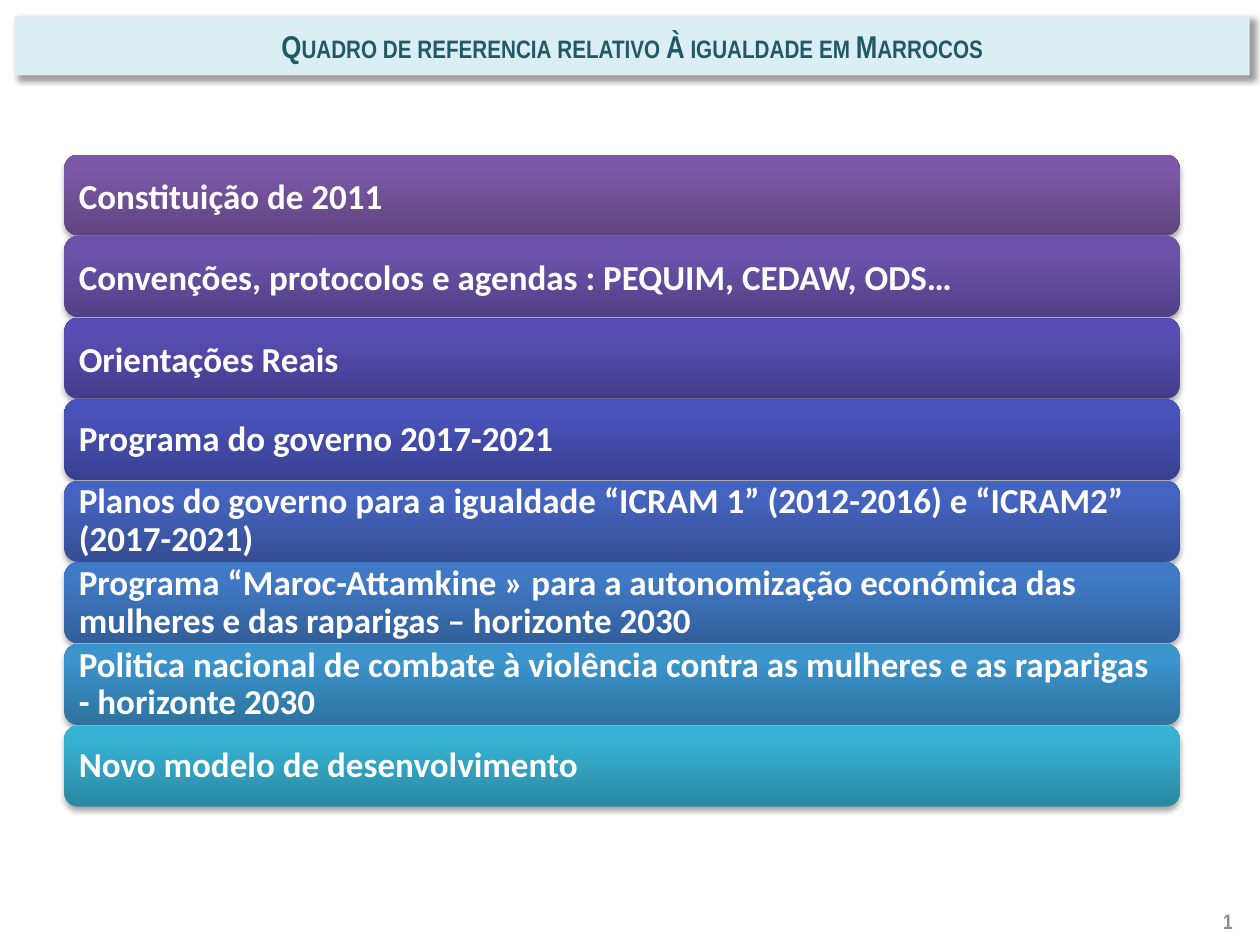
"""Build the slide on Morocco's reference framework for equality."""
import copy

import pptx
import pptx.dml.color
import pptx.enum.shapes
import pptx.enum.text
import pptx.oxml
import pptx.oxml.ns
import pptx.util
from lxml import etree

Cm = pptx.util.Cm
RGB = pptx.dml.color.RGBColor
qn = pptx.oxml.ns.qn
MID = pptx.enum.text.MSO_ANCHOR.MIDDLE
ALIGN = pptx.enum.text.PP_ALIGN

PALE = RGB(0xDB, 0xEE, 0xF4)
TEAL = RGB(0x21, 0x59, 0x68)
GREY = RGB(0x8C, 0x8C, 0x8C)
WHITE = RGB(0xFF, 0xFF, 0xFF)

BARS = [
    ("Constituição de 2011", 1.0, "5F4480 7B58A6 7C57A8"),
    ("Convenções, protocolos e agendas : PEQUIM, CEDAW, ODS…", 1.0,
     "534085 6B53AC 6B52AF"),
    ("Orientações Reais", 1.0, "443C8A 584EB3 574CB6"),
    ("Programa do governo 2017-2021", 0.9, "383F8F 4952B9 4751BC"),
    ("Planos do governo para a igualdade “ICRAM 1” (2012-2016) e "
     "“ICRAM2” (2017-2021)", 0.9, "354D93 4564BF 4263C3"),
    ("Programa “Maroc-Attamkine » para a autonomização económica das "
     "mulheres e das raparigas – horizonte 2030", 0.9, "315E98 407AC6 3E7AC9"),
    ("Politica nacional de combate à violência contra as mulheres e as "
     "raparigas - horizonte 2030", 0.9, "2E729D 3B94CC 3995CF"),
    ("Novo modelo de desenvolvimento", 0.9, "2A88A2 37B1D2 34B4D6"),
]


def shade(shape, blur, dist, angle, alpha):
    """Give the shape a soft black outer shadow."""
    shape.shadow.inherit = False
    effects = shape._element.spPr.find(qn("a:effectLst"))
    outer = etree.SubElement(
        effects, qn("a:outerShdw"), blurRad=str(pptx.util.Pt(blur)),
        dist=str(pptx.util.Pt(dist)), dir=str(angle * 60000),
        algn="ctr", rotWithShape="0")
    black = etree.SubElement(outer, qn("a:srgbClr"), val="000000")
    etree.SubElement(black, qn("a:alpha"), val=str(alpha * 1000))


def write(shape, text, face, size, color, align):
    """Add one bold run, centred vertically, and return it with its paragraph."""
    frame = shape.text_frame
    frame.word_wrap = True
    frame.auto_size = pptx.enum.text.MSO_AUTO_SIZE.NONE
    frame.vertical_anchor = MID
    para = frame.paragraphs[0]
    para.alignment = align
    run = para.add_run()
    run.text = text
    run.font.name = face
    run.font.size = pptx.util.Pt(size)
    run.font.bold = True
    run.font.color.rgb = color
    return para, run


deck = pptx.Presentation()
deck.slide_width, deck.slide_height = Cm(25.4), Cm(19.05)
slide = deck.slides.add_slide(deck.slide_layouts[5])

title = slide.shapes.title
title.left, title.top = Cm(0.3), Cm(0.33)
title.width, title.height = Cm(24.89), Cm(1.19)
geom = etree.SubElement(title._element.spPr, qn("a:prstGeom"), prst="snip2DiagRect")
etree.SubElement(geom, qn("a:avLst"))
title.fill.solid()
title.fill.fore_color.rgb = PALE
shade(title, 4, 3, 45, 40)
para, run = write(title, "Quadro de referencia relativo À igualdade em Marrocos",
                  "Arial Narrow", 18, TEAL, ALIGN.CENTER)
run.font._element.set("cap", "small")

page = slide.shapes.add_textbox(Cm(19.18), Cm(18.06), Cm(5.92), Cm(1.02))
para, run = write(page, "2", "Arial Narrow", 12, GREY, ALIGN.RIGHT)
field = etree.Element(qn("a:fld"), type="slidenum",
                      id="{B6F15528-21DE-4FAA-801E-634DDDAF4B2B}")
field.extend(list(run._r))
para._p.replace(run._r, field)

first, last = 3.12, 14.63
step = (last - first) / (len(BARS) - 1)
for row, (text, space, tones) in enumerate(BARS):
    bar = slide.shapes.add_shape(
        pptx.enum.shapes.MSO_SHAPE.ROUNDED_RECTANGLE,
        Cm(1.3), Cm(first + row * step), Cm(22.48), Cm(1.63))
    bar.line.fill.background()
    bar.fill.gradient()
    bar.fill.gradient_angle = 90
    stops = bar._element.spPr.find(".//" + qn("a:gsLst"))
    stops.append(copy.deepcopy(stops[-1]))
    for stop, tone, place in zip(bar.fill.gradient_stops, tones.split(), (0, 0.8, 1)):
        stop.color.rgb = RGB.from_string(tone)
        stop.position = place
    shade(bar, 3.1, 1.8, 90, 35)
    frame = bar.text_frame
    frame.margin_left = frame.margin_right = Cm(0.21)
    frame.margin_top = frame.margin_bottom = Cm(0.21)
    para, run = write(bar, text, "Calibri", 20, WHITE, ALIGN.LEFT)
    para.line_spacing = space

deck.save("out.pptx")
